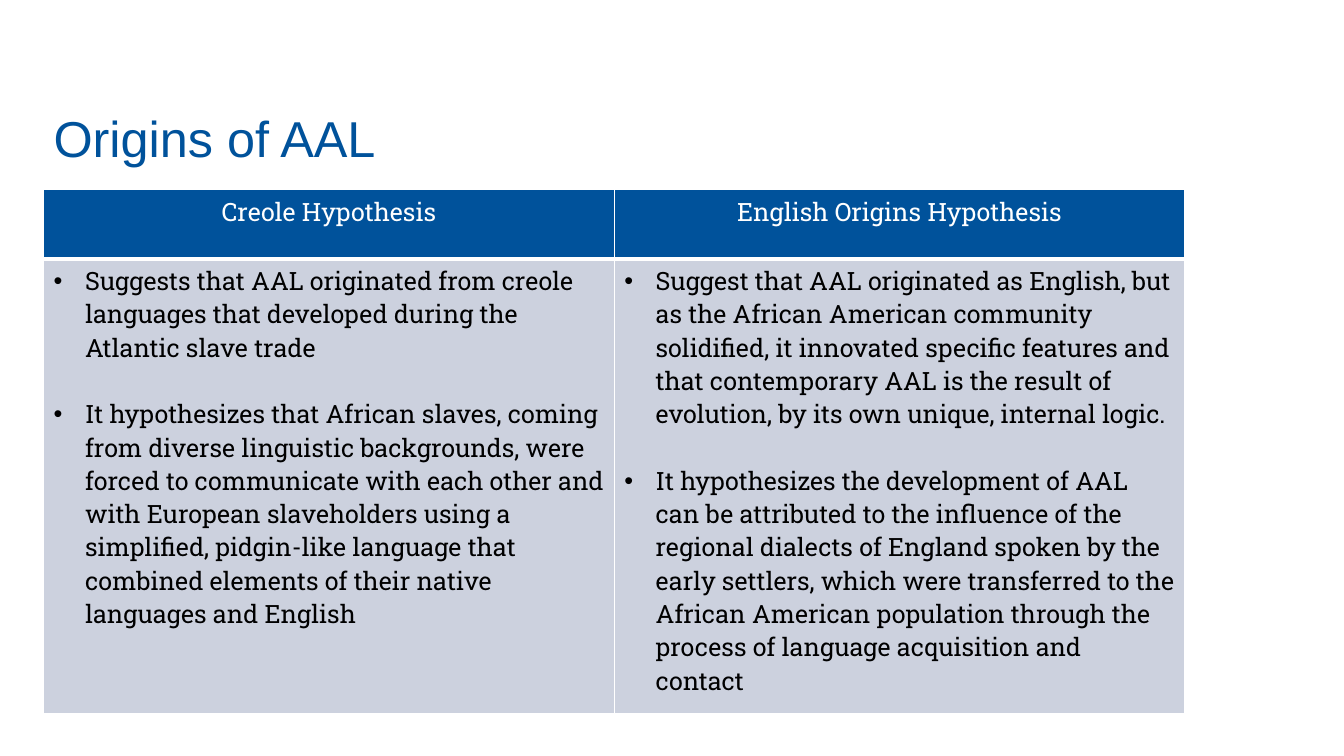
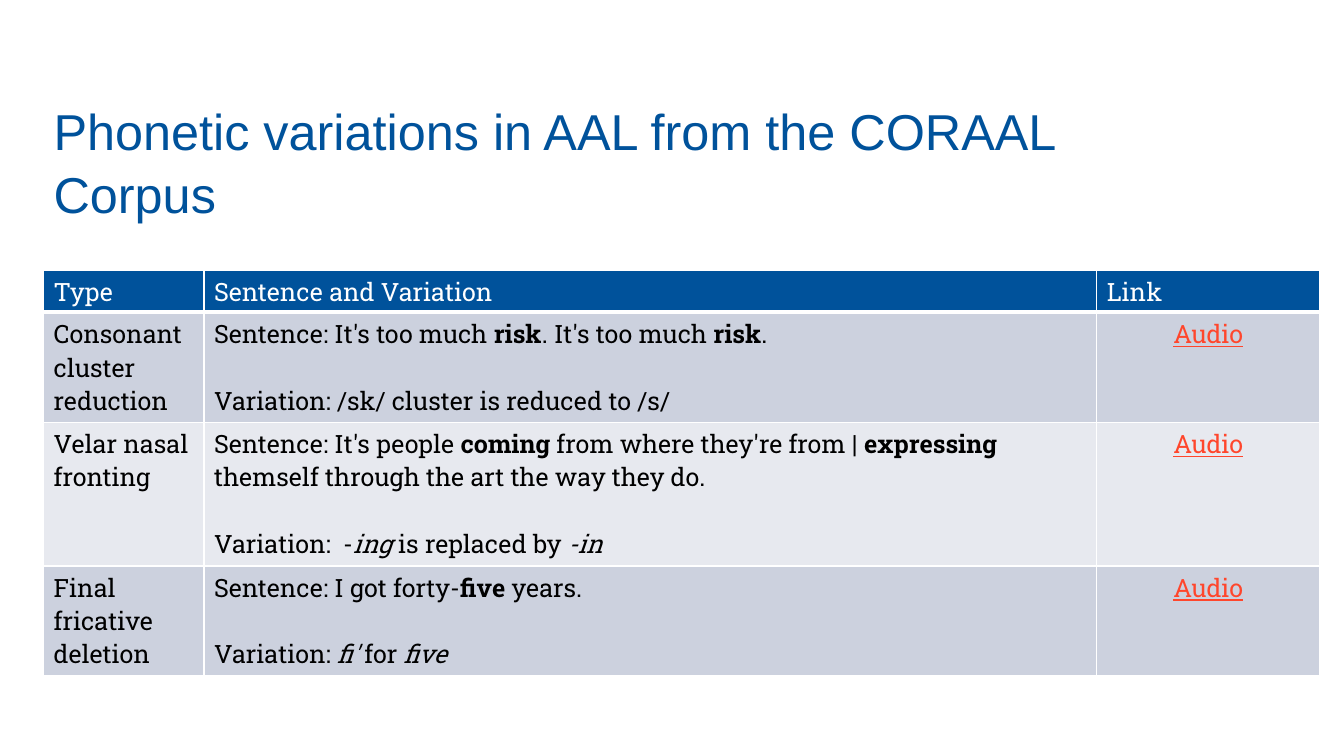
import pptx
import pptx.dml.color
import pptx.enum.text
import pptx.oxml
import pptx.oxml.ns
import pptx.util
from pptx.util import Cm

BLUE, LAVENDER, PALE = "00529B", "CCD1DE", "E7E9EF"
WHITE, BLACK, LINK_RED = "FFFFFF", "000000", "FF462C"
TITLE_FONT, BODY_FONT = "Arial", "Roboto Slab"
TITLE_SIZE, BODY_SIZE = 36, 18
PARAGRAPH_GAP = 23.75
LEFT = 1.1
TITLE_WIDTH = 28
BULLET_INDENT = Cm(0.79)
CENTER = pptx.enum.text.PP_ALIGN.CENTER

AUDIO = [[("Audio", "link")]]

SLIDES = [
    {
        "title": "Origins of AAL",
        "title_top": 2.41,
        "title_height": 2.36,
        "table_top": 4.78,
        "columns": [14.38, 14.38],
        "rows": [1.75, 11.45],
        "header": ["Creole Hypothesis", "English Origins Hypothesis"],
        "header_centered": True,
        "centered_columns": [],
        "bullets": True,
        "body": [
            [
                [
                    [("Suggests that AAL originated from creole languages that developed "
                      "during the Atlantic slave trade", "")],
                    [("It hypothesizes that African slaves, coming from diverse linguistic "
                      "backgrounds, were forced to communicate with each other and with "
                      "European slaveholders using a simplified, pidgin-like language that "
                      "combined elements of their native languages and English", "")],
                ],
                [
                    [("Suggest that AAL originated as English, but as the African American "
                      "community solidified, it innovated specific features and that "
                      "contemporary AAL is the result of evolution, by its own unique, "
                      "internal logic.", "")],
                    [("It hypothesizes the development of AAL can be attributed to the "
                      "influence of the regional dialects of England spoken by the early "
                      "settlers, which were transferred to the African American population "
                      "through the process of language acquisition and contact", "")],
                ],
            ],
        ],
    },
    {
        "title": "Phonetic variations in AAL from the CORAAL Corpus",
        "title_top": 2.24,
        "title_height": 3.1,
        "table_top": 6.81,
        "columns": [4.04, 22.5, 5.62],
        "rows": [1.06, 2.77, 3.62, 2.77],
        "header": ["Type", "Sentence and Variation", "Link"],
        "header_centered": False,
        "centered_columns": [2],
        "bullets": False,
        "body": [
            [
                [[("Consonant cluster reduction", "")]],
                [
                    [("Sentence: It's too much", ""), (" risk", "bold"),
                     (". It's too much ", ""), ("risk", "bold"), (".", "")],
                    [("Variation: /sk/ cluster is reduced to /s/", "")],
                ],
                AUDIO,
            ],
            [
                [[("Velar nasal fronting", "")]],
                [
                    [("Sentence: It's people ", ""), ("coming", "bold"),
                     (" from where they're from | ", ""), ("expressing", "bold"),
                     (" themself through the art the way they do.", "")],
                    [("Variation:  -", ""), ("ing ", "italic"),
                     ("is replaced by ", ""), ("-in", "italic")],
                ],
                AUDIO,
            ],
            [
                [[("Final fricative deletion", "")]],
                [
                    [("Sentence: I got forty-", ""), ("five", "bold"), (" years.", "")],
                    [("Variation: ", ""), ("fi'", "italic"), (" for ", ""), ("five", "italic")],
                ],
                AUDIO,
            ],
        ],
    },
]


def rgb(value):
    return pptx.dml.color.RGBColor.from_string(value)


def style_font(font, name, size, color):
    font.name = name
    font.size = pptx.util.Pt(size)
    font.color.rgb = rgb(color)


def add_title(slide, content):
    title = slide.shapes.add_textbox(
        Cm(LEFT), Cm(content["title_top"]), Cm(TITLE_WIDTH), Cm(content["title_height"]))
    frame = title.text_frame
    frame.word_wrap = True
    frame.margin_top = Cm(0.25)
    frame.text = content["title"]
    paragraph = frame.paragraphs[0]
    paragraph.line_spacing = 1.03
    style_font(paragraph.runs[0].font, TITLE_FONT, TITLE_SIZE, BLUE)


def add_bullet(paragraph):
    properties = paragraph._p.get_or_add_pPr()
    properties.set("marL", str(BULLET_INDENT))
    properties.set("indent", str(-BULLET_INDENT))
    namespace = pptx.oxml.ns.nsdecls("a")
    for markup in (f'<a:buFont {namespace} typeface="Arial"/>',
                   f'<a:buChar {namespace} char="•"/>'):
        properties.append(pptx.oxml.parse_xml(markup))


def paint_cell(cell, fill, bottom_width):
    cell.fill.solid()
    cell.fill.fore_color.rgb = rgb(fill)
    properties = cell._tc.get_or_add_tcPr()
    widths = {"lnL": 1, "lnR": 1, "lnT": 1, "lnB": bottom_width}
    for position, (side, width) in enumerate(widths.items()):
        properties.insert(position, pptx.oxml.parse_xml(
            f'<a:{side} {pptx.oxml.ns.nsdecls("a")} w="{pptx.util.Pt(width)}">'
            f'<a:solidFill><a:srgbClr val="{WHITE}"/></a:solidFill></a:{side}>'))


def fill_cell(cell, paragraphs, color, centered, bullets):
    frame = cell.text_frame
    for index, runs in enumerate(paragraphs):
        paragraph = frame.add_paragraph() if index else frame.paragraphs[0]
        if bullets:
            add_bullet(paragraph)
        if index:
            paragraph.space_before = pptx.util.Pt(PARAGRAPH_GAP)
        if centered:
            paragraph.alignment = CENTER
        for text, style in runs:
            run = paragraph.add_run()
            run.text = text
            style_font(run.font, BODY_FONT, BODY_SIZE, LINK_RED if style == "link" else color)
            run.font.bold = style == "bold"
            run.font.italic = style == "italic"
            run.font.underline = style == "link"


def add_content_table(slide, content):
    columns, rows = content["columns"], content["rows"]
    table = slide.shapes.add_table(
        len(rows), len(columns), Cm(LEFT), Cm(content["table_top"]),
        Cm(sum(columns)), Cm(sum(rows))).table
    for column, width in zip(table.columns, columns):
        column.width = Cm(width)
    for row, height in zip(table.rows, rows):
        row.height = Cm(height)
    for c, heading in enumerate(content["header"]):
        cell = table.cell(0, c)
        paint_cell(cell, BLUE, 3)
        fill_cell(cell, [[(heading, "")]], WHITE, content["header_centered"], False)
    for r, entries in enumerate(content["body"], 1):
        for c, paragraphs in enumerate(entries):
            cell = table.cell(r, c)
            paint_cell(cell, LAVENDER if r % 2 else PALE, 1)
            fill_cell(cell, paragraphs, BLACK,
                      c in content["centered_columns"], content["bullets"])


def main():
    deck = pptx.Presentation()
    deck.slide_width, deck.slide_height = Cm(33.87), Cm(19.05)
    for content in SLIDES:
        slide = deck.slides.add_slide(deck.slide_layouts[6])
        add_content_table(slide, content)
        add_title(slide, content)
    deck.save("out.pptx")


if __name__ == "__main__":
    main()
